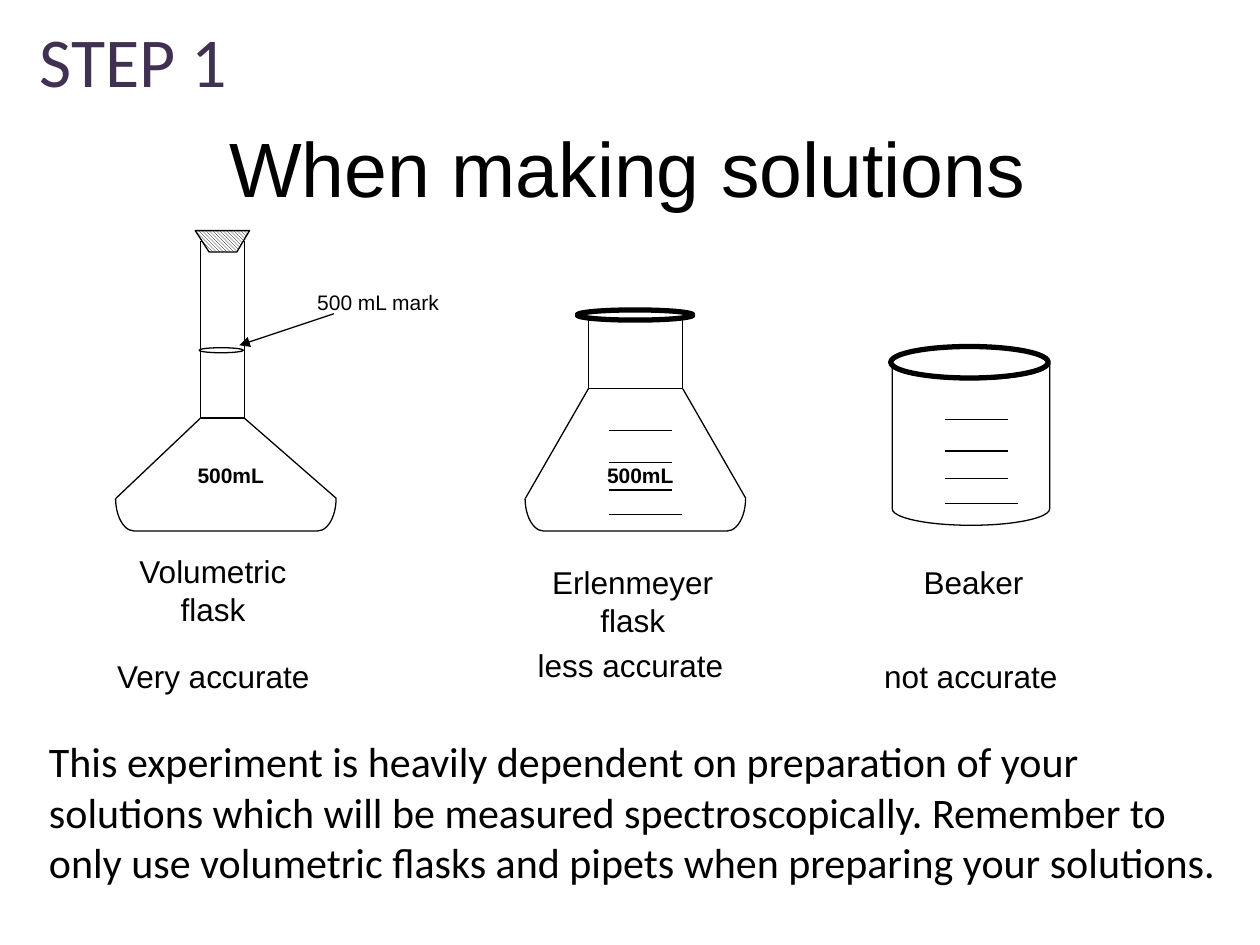
from pptx import Presentation
from pptx.dml.color import RGBColor
from pptx.enum.dml import MSO_PATTERN
from pptx.enum.shapes import MSO_CONNECTOR, MSO_SHAPE as SHAPE
from pptx.enum.text import MSO_ANCHOR, MSO_AUTO_SIZE as FIT, PP_ALIGN as ALIGN
from pptx.oxml.ns import qn
from pptx.util import Pt
from lxml.etree import SubElement

BLACK, WHITE = "000000", "FFFFFF"
TITLE = ("When making solutions", (123.8, 65.5, 480, 59.8), {"size": 44})
LABELS = [
    ("500 mL mark", (174.2, 162, 99.4, 27.4), {"size": 12, "wrap": True}),
    ("Volumetric\nflask", (72, 311.8, 99.4, 50.4), {"align": ALIGN.CENTER}),
    ("Erlenmeyer\nflask", (308.2, 318.2, 106.6, 50.4), {"align": ALIGN.CENTER}),
    ("Beaker", (520.6, 318.2, 71.3, 28.8), {"align": ALIGN.CENTER}),
    ("Very accurate", (59.8, 372.2, 125.3, 28.8), {}),
    ("less accurate", (300.2, 365.8, 120.2, 28.8), {}),
    ("not accurate", (498.2, 372.2, 114.5, 28.8), {}),
    ("This experiment is heavily dependent on preparation of your solutions "
     "which will be measured spectroscopically. Remember to only use volumetric "
     "flasks and pipets when preparing your solutions.",
     (20.9, 416.9, 691.9, 94.3), {"size": 24, "name": "Calibri", "wrap": True}),
    ("STEP 1", (15.8, 6.5, 122.4, 55.4), {"size": 40, "name": "Calibri", "color": "403152"}),
]
FLASKS = [
    {"left": 66.2, "neck": (114.5, 138.2, 25.2, 100.8)},
    {"left": 300.2, "neck": (336.2, 182.2, 54, 40)},
]
FLASK_WIDTH, SHOULDER = 126, 284.8
STOPPER = [(111.6, 131.8), (119.5, 144), (135.4, 144), (142.6, 131.8)]
RIMS = [
    ((113.8, 198.7, 25.2, 2.9), 0.75),
    ((329.8, 177.1, 66.2, 5.8), 3),
    ((509, 198, 90, 18), 3),
]
BEAKER = (509.8, 198, 90, 102.2)
ARROW = (190.8, 179.3, 136.8, 197.3)
TICK_SETS = [(347.8, 246.2), (540, 239.8)]
TICKS = [(0, 36), (18, 36), (33.8, 36), (47.9, 42)]


def rgb(color):
    return RGBColor.from_string(color)


def style(sp, fill=None, width=0.75):
    sp.shadow.inherit = False
    if fill:
        sp.fill.solid()
        sp.fill.fore_color.rgb = rgb(fill)
    else:
        sp.fill.background()
    sp.line.color.rgb = rgb(BLACK)
    sp.line.width = Pt(width)


def shape(s, kind, box, fill=None, width=0.75):
    sp = s.shapes.add_shape(kind, *map(Pt, box))
    style(sp, fill, width)
    return sp


def line(s, x1, y1, x2, y2, arrow=False):
    sp = s.shapes.add_connector(MSO_CONNECTOR.STRAIGHT, *map(Pt, (x1, y1, x2, y2)))
    sp.line.color.rgb = rgb(BLACK)
    sp.line.width = Pt(0.75)
    if arrow:
        SubElement(sp.line._get_or_add_ln(), qn("a:tailEnd"), type="triangle")
    SubElement(sp._element.spPr, qn("a:effectLst"))


def write(sp, text, box, size=18, name="Arial", color=BLACK, bold=False,
          align=ALIGN.LEFT, wrap=False):
    sp.left, sp.top, sp.width, sp.height = map(Pt, box)
    tf = sp.text_frame
    frame = {"word_wrap": wrap, "auto_size": FIT.NONE, "vertical_anchor": MSO_ANCHOR.TOP}
    for key, value in frame.items():
        setattr(tf, key, value)
    tf.text = text
    for p in tf.paragraphs:
        p.alignment = align
        for r in p.runs:
            for key, value in {"size": Pt(size), "name": name, "bold": bold}.items():
                setattr(r.font, key, value)
            r.font.color.rgb = rgb(color)


def label(s, text, box, **fmt):
    write(s.shapes.add_textbox(*map(Pt, box)), text, box, **fmt)


def flask(s, left, neck):
    x, y, w, h = neck
    right = left + FLASK_WIDTH
    shape(s, SHAPE.RECTANGLE, neck, WHITE)
    base = shape(s, SHAPE.LEFT_BRACKET, (left + 53.5, 231.1, 18.7, FLASK_WIDTH), WHITE)
    base.rotation = 270
    base.adjustments[0] = 0.57
    line(s, x, y + h, left, SHOULDER)
    line(s, x + w, y + h, right, SHOULDER)
    label(s, "500mL", (left + 39.6, 260.6, 54, 27.4), size=12, bold=True, wrap=True)


def stopper(s):
    fb = s.shapes.build_freeform(*map(Pt, STOPPER[0]))
    fb.add_line_segments([(Pt(x), Pt(y)) for x, y in STOPPER[1:]], close=True)
    sp = fb.convert_to_shape()
    style(sp)
    sp.fill.patterned()
    sp.fill.pattern = MSO_PATTERN.LIGHT_DOWNWARD_DIAGONAL
    sp.fill.fore_color.rgb = rgb(BLACK)
    sp.fill.back_color.rgb = rgb(WHITE)


def main():
    prs = Presentation()
    prs.slide_width, prs.slide_height = Pt(720), Pt(540)
    s = prs.slides.add_slide(prs.slide_layouts[5])
    text, box, fmt = TITLE
    write(s.shapes.title, text, box, **fmt)
    for parts in FLASKS:
        flask(s, **parts)
    stopper(s)
    for box, width in RIMS:
        shape(s, SHAPE.OVAL, box, width=width)
    line(s, *ARROW, arrow=True)
    for x, top in TICK_SETS:
        for dy, length in TICKS:
            line(s, x, top + dy, x + length, top + dy)
    shape(s, SHAPE.CAN, BEAKER).adjustments[0] = 0.21
    for text, box, fmt in LABELS:
        label(s, text, box, **fmt)
    prs.save("out.pptx")


if __name__ == "__main__":
    main()
